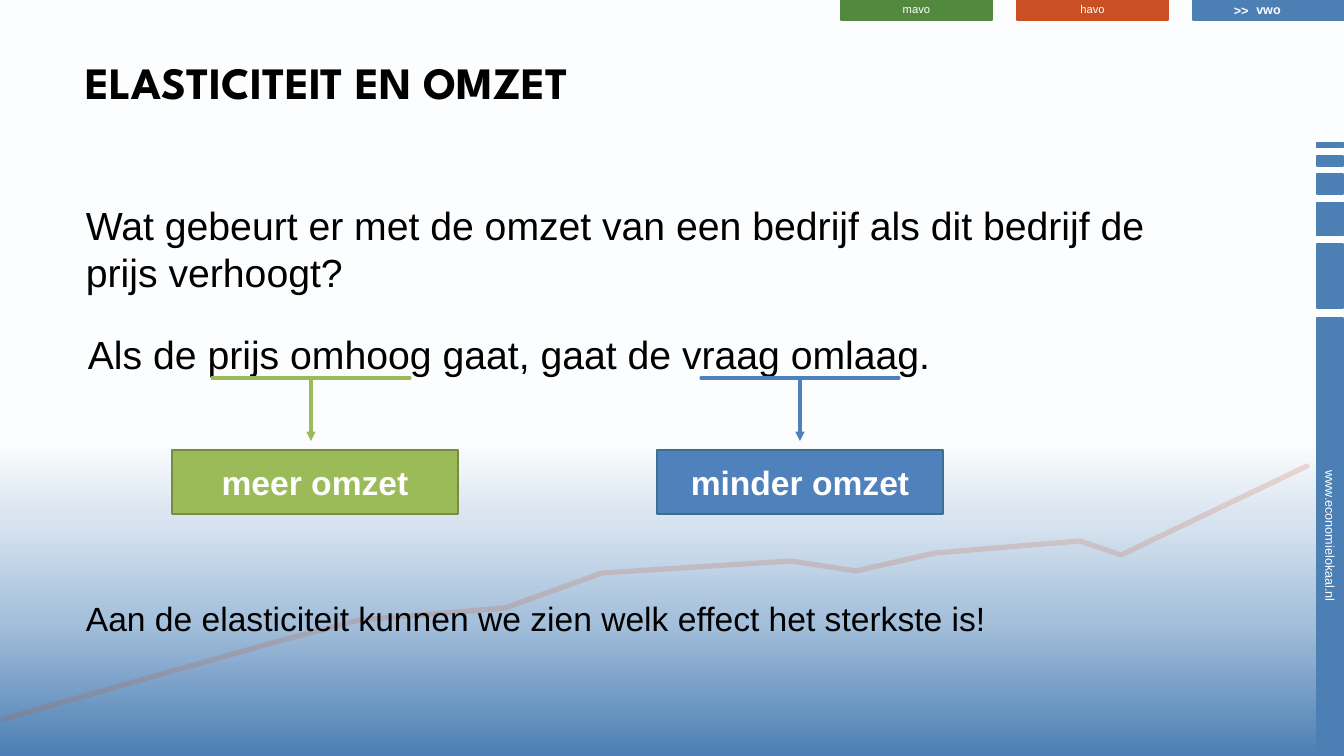
import pptx
import pptx.util
import pptx.dml.color
import pptx.enum.shapes
import pptx.enum.text
import pptx.oxml
import pptx.oxml.ns
from dataclasses import dataclass
from lxml import etree

UNIT = 914400 / 100.8  # EMU in one px
WIDE, HIGH = 1344, 756
qn = pptx.oxml.ns.qn
ALIGN = pptx.enum.text.PP_ALIGN
ANCHOR = pptx.enum.text.MSO_ANCHOR


@dataclass(frozen=True)
class Theme:
    body: str = "Arial"
    head: str = "League Spartan"
    black: str = "000000"
    white: str = "FFFFFF"
    steel: str = "4C7FB4"
    rust: str = "CA4F22"
    leaf: str = "52893F"
    lime: str = "9BBB59"
    moss: str = "798A42"
    blue: str = "4F81BD"
    teal: str = "3A708C"
    fade: tuple = ((0, "4C7FB4"), (18, "A5C0DB"), (30, "D4E1EE"),
                   (42, "FCFDFE"), (50, "FFFFFF"))
    title: int = 32
    large: int = 28
    mid: int = 24
    small: int = 9
    tiny: int = 8
    edge: float = 1.25
    rule: float = 2.25
    trend: float = 3.75


T = Theme()


def px(num):
    return pptx.util.Emu(round(num * UNIT))


def rgb(code):
    return pptx.dml.color.RGBColor.from_string(code)


def write(frame, text, size=T.large, color=T.black, font=T.body, bold=False,
          align=ALIGN.LEFT, anchor=ANCHOR.TOP, wrap=True):
    frame.word_wrap = wrap
    frame.vertical_anchor = anchor
    para = frame.paragraphs[0]
    para.alignment = align
    run = para.add_run()
    run.text = text
    run.font.size = pptx.util.Pt(size)
    run.font.name = font
    run.font.bold = bold
    run.font.color.rgb = rgb(color)


def label(slide, text, x, y, w, h, **form):
    box = slide.shapes.add_textbox(px(x), px(y), px(w), px(h))
    write(box.text_frame, text, **form)


def block(slide, x, y, w, h, fill, edge, text="", slim=False, **form):
    kind = pptx.enum.shapes.MSO_SHAPE.RECTANGLE
    box = slide.shapes.add_shape(kind, px(x), px(y), px(w), px(h))
    box.shadow.inherit = False
    box.fill.solid()
    box.fill.fore_color.rgb = rgb(fill)
    box.line.color.rgb = rgb(edge)
    box.line.width = pptx.util.Pt(T.edge)
    if slim:
        box.text_frame.margin_top = 0
        box.text_frame.margin_bottom = px(1)
    if text:
        write(box.text_frame, text, color=T.white, align=ALIGN.CENTER,
              anchor=ANCHOR.MIDDLE, **form)
    return box


def bar(slide, mid, span, **form):
    """Turned block on the right edge, centred at height mid."""
    box = block(slide, 1330 - span / 2, mid - 13, span, 26,
                T.steel, T.steel, slim=True, **form)
    box.rotation = 90


def line(slide, x1, y1, x2, y2, color, arrow=False):
    kind = pptx.enum.shapes.MSO_CONNECTOR.STRAIGHT
    link = slide.shapes.add_connector(kind, px(x1), px(y1), px(x2), px(y2))
    link.line.color.rgb = rgb(color)
    link.line.width = pptx.util.Pt(T.rule)
    pen = link.line._get_or_add_ln()
    pen.set("cap", "rnd")
    if arrow:
        etree.SubElement(pen, qn("a:tailEnd"), type="triangle")
    etree.SubElement(link._element.spPr, qn("a:effectLst"))


def trend(slide, points):
    form = slide.shapes.build_freeform(*points[0], scale=UNIT)
    form.add_line_segments(points[1:], close=False)
    curve = form.convert_to_shape()
    curve.shadow.inherit = False
    curve.fill.background()
    curve.line.color.rgb = rgb(T.rust)
    curve.line.width = pptx.util.Pt(T.trend)
    pen = curve.line._get_or_add_ln()
    pen.set("cap", "rnd")
    tint = pen.find(".//" + qn("a:srgbClr"))
    etree.SubElement(tint, qn("a:alpha"), val="19000")


def backdrop(slide):
    fill = slide.background.fill
    fill.gradient()
    fill.gradient_angle = 90
    stops = slide.element.find(".//" + qn("a:gsLst"))
    for stop in list(stops):
        stops.remove(stop)
    for spot, code in T.fade:
        stop = etree.SubElement(stops, qn("a:gs"), pos=str(spot * 1000))
        etree.SubElement(stop, qn("a:srgbClr"), val=code)


def effect(slide, text, x, mid, fill, edge):
    """Underline with an arrow down to a result block."""
    line(slide, mid - 99, 378, mid + 99, 378, fill)
    block(slide, x, 450, 286, 64, fill, edge, text, size=T.mid, bold=True)
    line(slide, mid, 378, mid, 441, fill, arrow=True)


def main():
    deck = pptx.Presentation()
    deck.slide_width, deck.slide_height = px(WIDE), px(HIGH)
    slide = deck.slides.add_slide(deck.slide_layouts[6])
    backdrop(slide)

    # Right edge
    bar(slide, 536, 436, text="www.economielokaal.nl", size=T.small)
    for mid, span in ((276, 64), (219, 33), (184, 20), (161, 10), (145, 5)):
        bar(slide, mid, span)

    # Level tabs
    tabs = (("mavo", T.leaf, T.tiny, False), ("havo", T.rust, T.tiny, False),
            ("vwo", T.steel, T.small, True))
    for i, (name, color, size, bold) in enumerate(tabs):
        block(slide, 841 + 176 * i, 0, 151, 20, color, color, name,
              slim=True, size=size, bold=bold)
    label(slide, ">>", 1224, -2, 35, 25, size=T.small, color=T.white,
          bold=True, wrap=False)

    # Trend line
    trend(slide, ((1307, 466), (1121, 555), (1080, 541), (935, 553),
                  (856, 571), (791, 561), (602, 573), (505, 608),
                  (360, 620), (272, 643), (3, 719)))

    # Title and text
    label(slide, "ELASTICITEIT EN OMZET", 76, 50, 1010, 90,
          size=T.title, font=T.head, bold=True)
    label(slide, "Wat gebeurt er met de omzet van een bedrijf als dit bedrijf "
          "de prijs verhoogt?", 76, 196, 1097, 119)
    label(slide, "Als de prijs omhoog gaat, gaat de vraag omlaag.",
          76, 325, 866, 72, align=ALIGN.CENTER)
    label(slide, "Aan de elasticiteit kunnen we zien welk effect het sterkste "
          "is!", 76, 593, 1128, 72, size=T.mid)

    # Effects on turnover
    effect(slide, "meer omzet", 172, 311, T.lime, T.moss)
    effect(slide, "minder omzet", 657, 800, T.blue, T.teal)

    deck.save("out.pptx")


if __name__ == "__main__":
    main()
